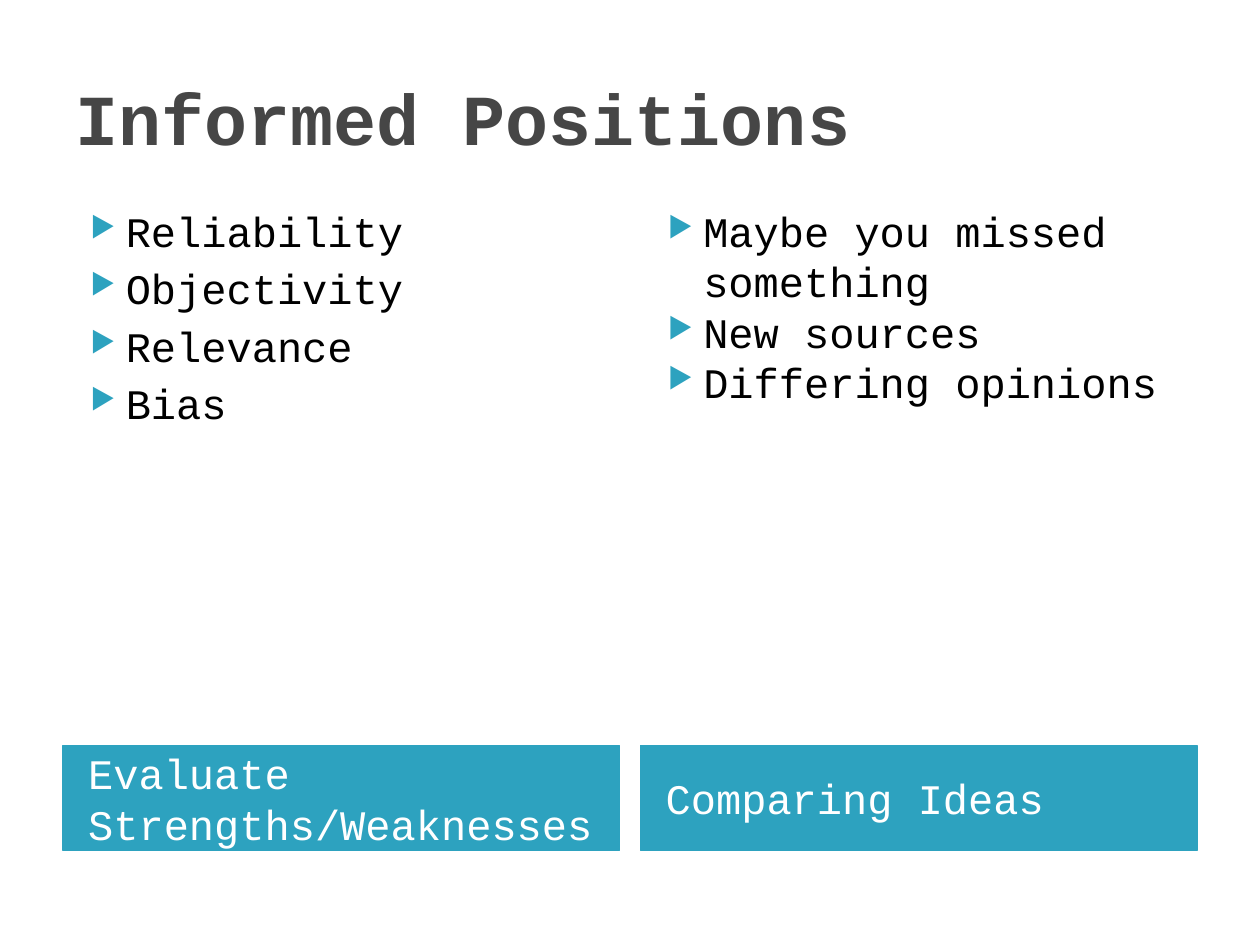
from dataclasses import dataclass
from typing import Any

from lxml.etree import SubElement
from pptx import Presentation
from pptx.dml.color import RGBColor
from pptx.enum.shapes import MSO_SHAPE
from pptx.enum.text import MSO_ANCHOR, PP_ALIGN
from pptx.oxml.ns import qn
from pptx.util import Pt

COLORS = {"title": "464646", "accent": "2DA2BF", "body": "000000", "caption": "FFFFFF"}
FONT = "Courier New"
LEFT, COLUMN_W, COLUMN_STEP = 36, 318, 330


@dataclass
class Column:
    caption: str
    items: list[str]
    gap: float


COLUMNS = [
    Column("Evaluate Strengths/Weaknesses",
           ["Reliability", "Objectivity", "Relevance", "Bias"], 4),
    Column("Comparing Ideas",
           ["Maybe you missed something", "New sources", "Differing opinions"], 0),
]


def rgb(name: str) -> RGBColor:
    return RGBColor.from_string(COLORS[name])


def apply(target: Any, values: dict[str, Any]) -> None:
    for name, value in values.items():
        setattr(target, name, value)


def add_bullet(p: Any) -> None:
    pPr = p._p.get_or_add_pPr()
    pPr.set("marL", str(Pt(28.8)))
    pPr.set("indent", str(-Pt(20.16)))
    color = SubElement(pPr, qn("a:buClr"))
    SubElement(color, qn("a:srgbClr"), val=COLORS["accent"])
    SubElement(pPr, qn("a:buSzPct"), val="68000")
    SubElement(pPr, qn("a:buChar"), char="▶")


def write(sp: Any, lines: list[str], color: str, size: float, bold: bool = False,
          anchor: Any = MSO_ANCHOR.MIDDLE, inset: float = 7.2,
          bullets: bool = False, gap: float = 0) -> None:
    tf = sp.text_frame
    apply(tf, {"word_wrap": True, "vertical_anchor": anchor,
               "margin_left": Pt(inset), "margin_right": Pt(7.2),
               "margin_top": Pt(3.6), "margin_bottom": Pt(3.6)})
    for i, line in enumerate(lines):
        p = tf.add_paragraph() if i else tf.paragraphs[0]
        p.alignment = PP_ALIGN.LEFT
        if i and gap:
            p.space_before = Pt(gap)
        if bullets:
            add_bullet(p)
        r = p.add_run()
        r.text = line
        apply(r.font, {"name": FONT, "size": Pt(size), "bold": bold})
        r.font.color.rgb = rgb(color)


def add_column(s: Any, column: Column, x: float) -> None:
    sp = s.shapes.add_shape(MSO_SHAPE.RECTANGLE, Pt(x), Pt(426), Pt(COLUMN_W), Pt(60))
    sp.shadow.inherit = False
    sp.fill.solid()
    sp.fill.fore_color.rgb = rgb("accent")
    sp.line.color.rgb = rgb("accent")
    sp.line.width = Pt(0.75)
    write(sp, [column.caption], "caption", 24, inset=14.4)
    sp = s.shapes.add_textbox(Pt(x), Pt(113.75), Pt(COLUMN_W), Pt(310.25))
    write(sp, column.items, "body", 24, anchor=MSO_ANCHOR.TOP, bullets=True, gap=column.gap)


def main() -> None:
    """Build the Informed Positions slide."""
    prs = Presentation()
    prs.slide_width, prs.slide_height = Pt(720), Pt(540)
    s = prs.slides.add_slide(prs.slide_layouts[6])
    title = s.shapes.add_textbox(Pt(LEFT), Pt(21.6), Pt(648), Pt(90))
    write(title, ["Informed Positions"], "title", 41, bold=True)
    for i, column in enumerate(COLUMNS):
        add_column(s, column, LEFT + i * COLUMN_STEP)
    prs.save("out.pptx")


if __name__ == "__main__":
    main()
